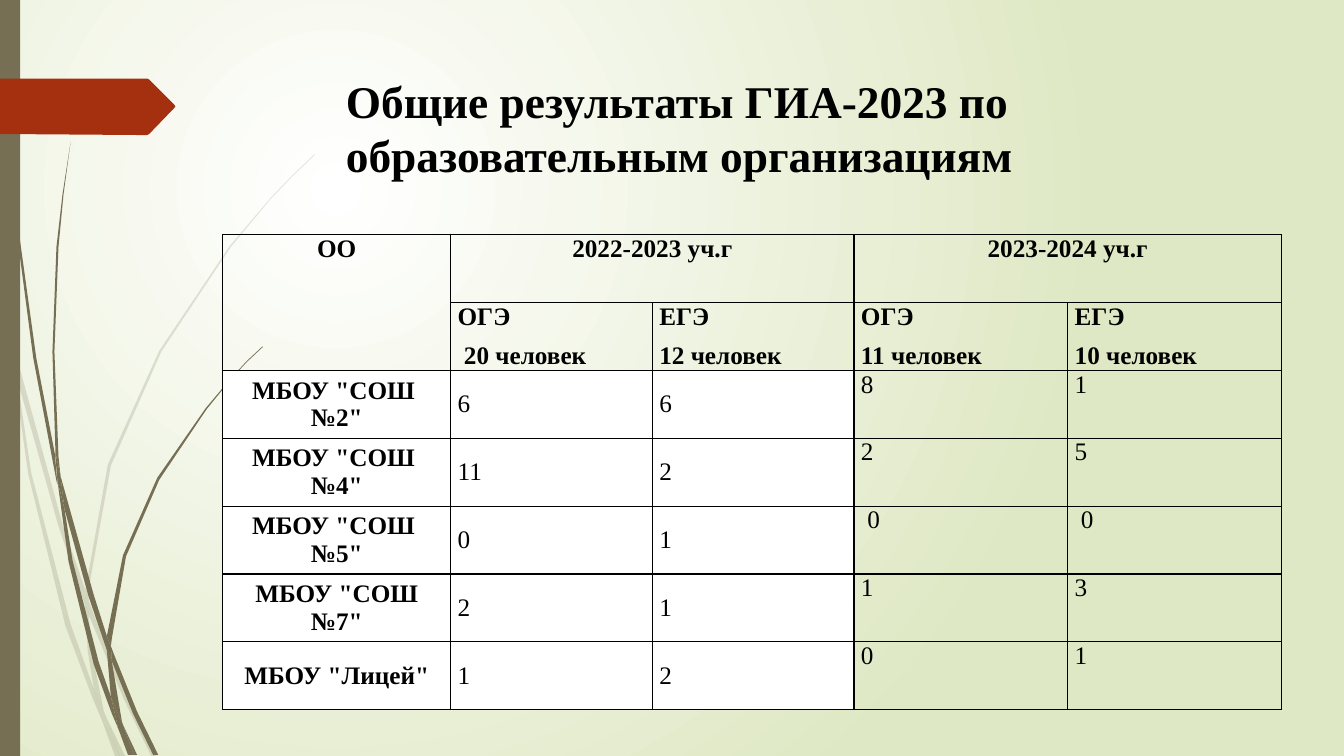
from lxml import etree
from pptx import Presentation
from pptx.dml.color import RGBColor
from pptx.enum.shapes import MSO_SHAPE
from pptx.enum.text import MSO_ANCHOR, MSO_AUTO_SIZE, PP_ALIGN
from pptx.oxml import parse_xml
from pptx.oxml.ns import nsdecls, qn
from pptx.util import Inches, Pt

COLORS = {"white": "FFFFFF", "green": "DFE8C4", "olive": "766F54",
          "red": "A53010", "black": "000000"}
FONT = "Times New Roman"

# Outlines of the grass blades, in inches.
PALE_GRASS = [
    [(0.11, 3.5), (0.09, 3.22), (0, 2.82), (0, 2.99), (0.1, 3.44)],
    [(0.58, 5.22), (0.84, 5.99), (0.85, 5.86), (0.62, 5.2), (0.14, 3.45),
     (0.17, 3.76)],
    [(0.92, 6.07), (0.88, 5.96), (0.88, 6.1), (1.23, 6.94), (1.5, 7.5),
     (1.55, 7.5), (1.27, 6.92)],
    [(1.19, 7.5), (1.24, 7.5), (1.05, 7.11)],
    [(0.93, 6.83), (0.7, 6.19), (0.31, 4.69), (0.17, 3.76), (0.11, 3.5),
     (0.28, 4.7), (0.65, 6.21), (0.92, 6.93), (1.01, 7.14), (0.99, 7.07)],
    [(0.84, 5.99), (0.87, 6.46), (0.93, 6.83), (0.96, 6.92), (1.05, 7.11),
     (1.03, 7.06), (0.91, 6.46), (0.88, 6.1), (0.88, 6.08)],
    [(0.88, 5.84), (1.1, 4.62), (1.6, 3.49), (2.29, 2.45), (2.68, 1.98),
     (2.9, 1.75), (3.12, 1.54), (3.12, 1.53), (2.89, 1.75), (2.68, 1.97),
     (2.28, 2.44), (1.58, 3.48), (1.07, 4.61), (0.85, 5.84), (0.85, 5.86),
     (0.88, 5.96)],
    [(1.01, 7.14), (1.14, 7.5), (1.19, 7.5)],
    [(0.88, 6.08), (0.88, 6.1), (0.88, 5.96), (0.85, 5.86), (0.84, 5.99)],
    [(0.96, 6.92), (0.93, 6.83), (0.99, 7.07), (1.01, 7.14), (1.19, 7.5),
     (1.05, 7.11)],
]
DARK_GRASS = [
    [(0.07, 1.1), (0.17, 2.33), (0.33, 3.55), (0.56, 4.77), (0.57, 4.81),
     (0.55, 4.57), (0.55, 4.53), (0.36, 3.55), (0.19, 2.32), (0.08, 1.09),
     (0.05, 0.48), (0.04, 0), (0.03, 0), (0.04, 0.48)],
    [(0.88, 5.92), (1.06, 6.45), (1.06, 6.33), (1.06, 6.31), (0.93, 5.9),
     (0.6, 4.72), (0.64, 5.05)],
    [(1.13, 6.49), (1.1, 6.41), (1.11, 6.56), (1.32, 7.08), (1.52, 7.49),
     (1.57, 7.49), (1.36, 7.06)],
    [(1.1, 6.91), (0.98, 6.57), (0.72, 5.56), (0.64, 5.05), (0.57, 4.77),
     (0.68, 5.57), (0.93, 6.59), (1.11, 7.08), (1.17, 7.22), (1.16, 7.17)],
    [(0.6, 4.72), (0.58, 4.53), (0.54, 3.49), (0.58, 2.45), (0.63, 1.93),
     (0.7, 1.41), (0.62, 1.93), (0.56, 2.45), (0.52, 3.49), (0.55, 4.49)],
    [(1.33, 7.49), (1.36, 7.49), (1.22, 7.19)],
    [(0.57, 4.77), (0.64, 5.05), (0.6, 4.72), (0.55, 4.49), (0.55, 4.53)],
    [(1.11, 6.33), (1.25, 5.52), (1.58, 4.76), (2.05, 4.06), (2.31, 3.74),
     (2.45, 3.59), (2.61, 3.44), (2.6, 3.44), (2.45, 3.58), (2.31, 3.73),
     (2.04, 4.05), (1.56, 4.74), (1.22, 5.51), (1.06, 6.31), (1.1, 6.41)],
    [(1.17, 7.22), (1.27, 7.49), (1.31, 7.49)],
    [(1.06, 6.45), (1.1, 6.91), (1.16, 7.06), (1.22, 7.19), (1.21, 7.16),
     (1.11, 6.56), (1.09, 6.51)],
    [(1.06, 6.45), (1.09, 6.51), (1.11, 6.56), (1.1, 6.41), (1.06, 6.31),
     (1.06, 6.33)],
    [(1.16, 7.06), (1.1, 6.91), (1.16, 7.17), (1.17, 7.22), (1.3, 7.49),
     (1.33, 7.49), (1.22, 7.19)],
]
POINTER = [(1.74, 1.06), (1.48, 1.33), (1.46, 1.34), (1.36, 1.34), (0, 1.33),
           (0, 0.78), (1.36, 0.78), (1.46, 0.78), (1.48, 0.79), (1.73, 1.04)]

TITLE = "Общие результаты ГИА-2023 по образовательным организациям"
COLUMNS = [2.26, 2, 2, 2.12, 2.12]
TABLE_HEIGHT = 4.71
YEARS = ["ОО", "2022-2023 уч.г", "", "2023-2024 уч.г", ""]
EXAMS = ["", "ОГЭ\n 20 человек", "ЕГЭ \n12 человек",
         "ОГЭ\n11 человек", "ЕГЭ\n10 человек"]
SCHOOLS = [
    ['МБОУ "СОШ  №2"', "6", "6", "8", "1"],
    ['МБОУ "СОШ  №4"', "11", "2", "2", "5"],
    ['МБОУ "СОШ  №5"', "0", "1", " 0", " 0"],
    ['МБОУ "СОШ №7"', "2", "1", "1", "3"],
    ['МБОУ "Лицей"', "1", "2", "0", "1"],
]


def rgb(name):
    return RGBColor.from_string(COLORS[name])


def set_background(s):
    """Radial gradient from white to green, centred in the upper left."""
    fill = s.background.fill
    fill.gradient()
    for stop, name in zip(fill.gradient_stops, ("white", "green")):
        stop.color.rgb = rgb(name)
    bg = s.background._cSld.find(".//" + qn("a:gradFill"))
    bg.replace(bg.find(qn("a:lin")), parse_xml(
        f'<a:path {nsdecls("a")} path="circle">'
        '<a:fillToRect l="50000" t="50000" r="100000" b="100000"/></a:path>'))


def paint(shape, name):
    shape.shadow.inherit = False
    shape.fill.solid()
    shape.fill.fore_color.rgb = rgb(name)
    shape.line.fill.background()


def add_outline(s, points, name, alpha=None):
    start, *rest = [(Inches(x), Inches(y)) for x, y in points]
    builder = s.shapes.build_freeform(*start)
    builder.add_line_segments(rest, close=True)
    shape = builder.convert_to_shape()
    paint(shape, name)
    if alpha:
        color = shape._element.spPr.find(".//" + qn("a:srgbClr"))
        etree.SubElement(color, qn("a:alpha"), val=str(alpha * 1000))


def add_side_bar(s):
    bar = s.shapes.add_shape(MSO_SHAPE.RECTANGLE, 0, 0, Inches(0.2), Inches(7.5))
    paint(bar, "olive")


def add_run(p, text, size, bold):
    r = p.add_run()
    r.text = text
    r.font.name, r.font.size, r.font.bold = FONT, Pt(size), bold
    r.font.color.rgb = rgb("black")


def set_title(s):
    title = s.shapes.title
    title.left, title.top = Inches(2.84), Inches(0.26)
    title.width, title.height = Inches(9.75), Inches(1.83)
    tf = title.text_frame
    tf.word_wrap, tf.auto_size = True, MSO_AUTO_SIZE.NONE
    tf.vertical_anchor = MSO_ANCHOR.TOP
    tf.margin_left, tf.margin_top = Inches(0.59), Inches(0.47)
    p = tf.paragraphs[0]
    p.alignment, p.line_spacing = PP_ALIGN.LEFT, Pt(38.6)
    add_run(p, TITLE, 32.4, True)


def set_borders(cell):
    tcPr = cell._tc.get_or_add_tcPr()
    for i, side in enumerate(("lnL", "lnR", "lnT", "lnB")):
        tcPr.insert(i, parse_xml(
            f'<a:{side} {nsdecls("a")} w="12700"><a:solidFill>'
            f'<a:srgbClr val="{COLORS["black"]}"/></a:solidFill></a:{side}>'))


def fill_cell(cell, text, bold, align, white):
    cell.margin_left = cell.margin_right = Inches(0.07)
    cell.margin_top = cell.margin_bottom = 0
    if white:
        cell.vertical_anchor = MSO_ANCHOR.MIDDLE
        cell.fill.solid()
        cell.fill.fore_color.rgb = rgb("white")
    else:
        cell.fill.background()
    set_borders(cell)
    tf = cell.text_frame
    for i, line in enumerate(text.split("\n")):
        p = tf.add_paragraph() if i else tf.paragraphs[0]
        p.alignment, p.space_after = align, Pt(8)
        if line:
            add_run(p, line, 18, bold)


def add_results(s):
    rows = [YEARS, EXAMS, *SCHOOLS]
    table = s.shapes.add_table(
        len(rows), len(COLUMNS), Inches(2.21), Inches(2.33),
        Inches(sum(COLUMNS)), Inches(TABLE_HEIGHT)).table
    table.first_row = table.horz_banding = False
    for column, width in zip(table.columns, COLUMNS):
        column.width = Inches(width)
    for i, row in enumerate(rows):
        table.rows[i].height = Inches(TABLE_HEIGHT / len(rows))
        for j, text in enumerate(row):
            centred = i == 0 or j == 0
            fill_cell(table.cell(i, j), text, bold=i < 2 or j == 0,
                      align=PP_ALIGN.CENTER if centred else PP_ALIGN.JUSTIFY,
                      white=i > 1 and j < 3)
    table.cell(0, 0).merge(table.cell(1, 0))
    for j in (1, 3):
        table.cell(0, j).merge(table.cell(0, j + 1))


def main():
    prs = Presentation()
    prs.slide_width, prs.slide_height = Inches(13.33), Inches(7.5)
    s = prs.slides.add_slide(prs.slide_layouts[5])
    set_background(s)
    for blade in PALE_GRASS:
        add_outline(s, blade, "olive", alpha=20)
    for blade in DARK_GRASS:
        add_outline(s, blade, "olive")
    add_side_bar(s)
    add_outline(s, POINTER, "red")
    set_title(s)
    add_results(s)
    prs.save("out.pptx")


if __name__ == "__main__":
    main()
